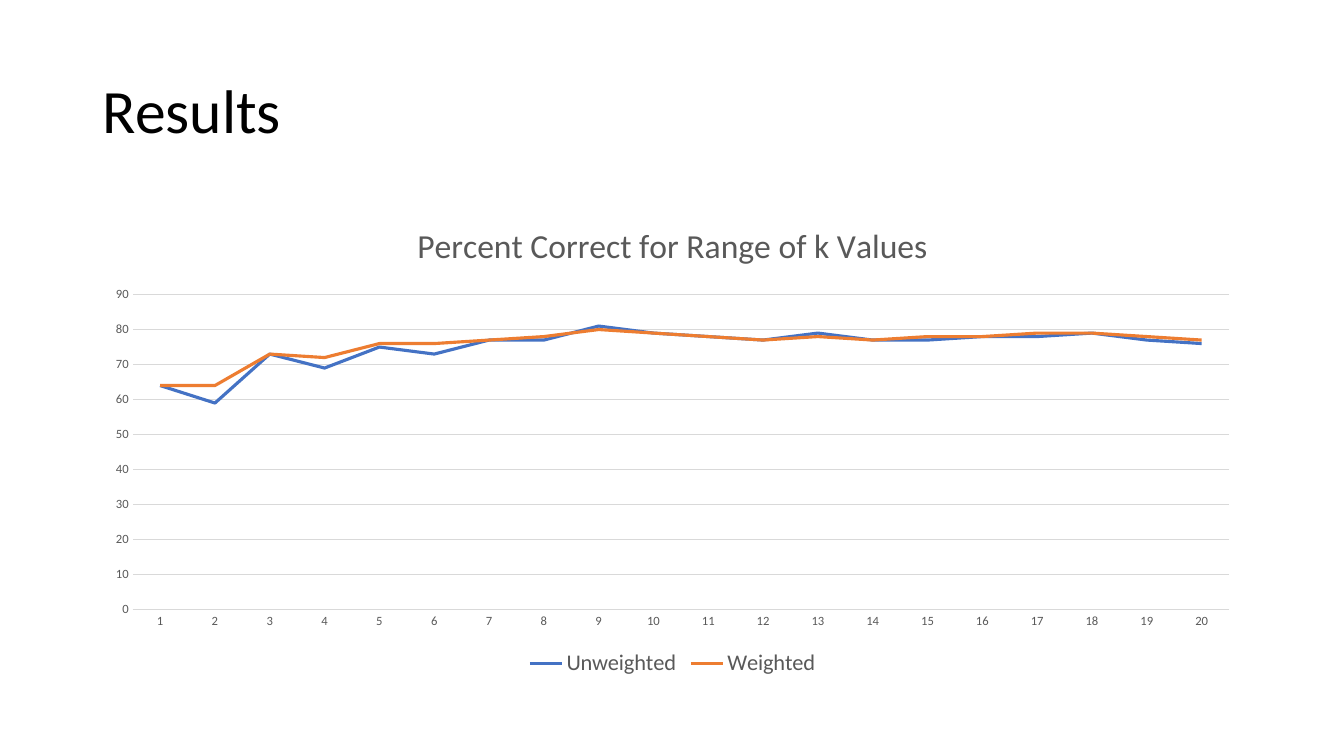
from pptx import Presentation
from pptx import util as u
from pptx.chart.data import CategoryChartData
from pptx.dml.color import RGBColor
from pptx.enum import chart as charts, text

COLORS = {
    "title": "000000",
    "label": "595959",
    "grid": "D9D9D9",
    "Unweighted": "4472C4",
    "Weighted": "ED7D31",
}
PERCENT_CORRECT = {
    "Unweighted": [64, 59, 73, 69, 75, 73, 77, 77, 81, 79,
                   78, 77, 79, 77, 77, 78, 78, 79, 77, 76],
    "Weighted": [64, 64, 73, 72, 76, 76, 77, 78, 80, 79,
                 78, 77, 78, 77, 78, 78, 79, 79, 78, 77],
}


def set_font(font, size, color):
    values = {"name": "Calibri", "size": u.Pt(size), "bold": False}
    for name, value in values.items():
        setattr(font, name, value)
    font.color.rgb = RGBColor.from_string(COLORS[color])


def set_line(line, width, color):
    line.width = u.Pt(width)
    line.color.rgb = RGBColor.from_string(COLORS[color])


presentation = Presentation()
presentation.slide_width = u.Inches(13.33)
presentation.slide_height = u.Inches(7.5)
slide = presentation.slides.add_slide(presentation.slide_layouts[6])

left, width = u.Inches(0.92), u.Inches(11.5)
title_box = slide.shapes.add_textbox(left, u.Inches(0.4), width, u.Inches(1.45))
title_frame = title_box.text_frame
title_frame.word_wrap = True
title_frame.vertical_anchor = text.MSO_ANCHOR.MIDDLE
paragraph = title_frame.paragraphs[0]
paragraph.text = "Results"
paragraph.line_spacing = 0.9
set_font(paragraph.runs[0].font, 44, "title")

chart_data = CategoryChartData()
chart_data.categories = [str(k) for k in range(1, 21)]
for name, values in PERCENT_CORRECT.items():
    chart_data.add_series(name, values)
chart = slide.shapes.add_chart(
    charts.XL_CHART_TYPE.LINE, left, u.Inches(2), width, u.Inches(4.76), chart_data
).chart
set_font(chart.font, 10, "title")

chart.has_title = True
chart_title = chart.chart_title.text_frame.paragraphs[0]
chart_title.text = "Percent Correct for Range of k Values"
set_font(chart_title.runs[0].font, 24, "label")
chart.chart_title.include_in_layout = False

chart.has_legend = True
chart.legend.position = charts.XL_LEGEND_POSITION.BOTTOM
chart.legend.include_in_layout = False
set_font(chart.legend.font, 16, "label")

for axis in (chart.category_axis, chart.value_axis):
    axis.major_tick_mark = charts.XL_TICK_MARK.NONE
    axis.minor_tick_mark = charts.XL_TICK_MARK.NONE
    set_font(axis.tick_labels.font, 9, "label")
set_line(chart.category_axis.format.line, 0.75, "grid")

value_axis = chart.value_axis
value_axis.minimum_scale = 0
value_axis.maximum_scale = 90
value_axis.major_unit = 10
value_axis.format.line.fill.background()
value_axis.has_major_gridlines = True
set_line(value_axis.major_gridlines.format.line, 0.75, "grid")

plot = chart.plots[0]
plot.vary_by_categories = False
for series in plot.series:
    series.smooth = False
    series.marker.style = charts.XL_MARKER_STYLE.NONE
    set_line(series.format.line, 2.25, series.name)

presentation.save("out.pptx")
